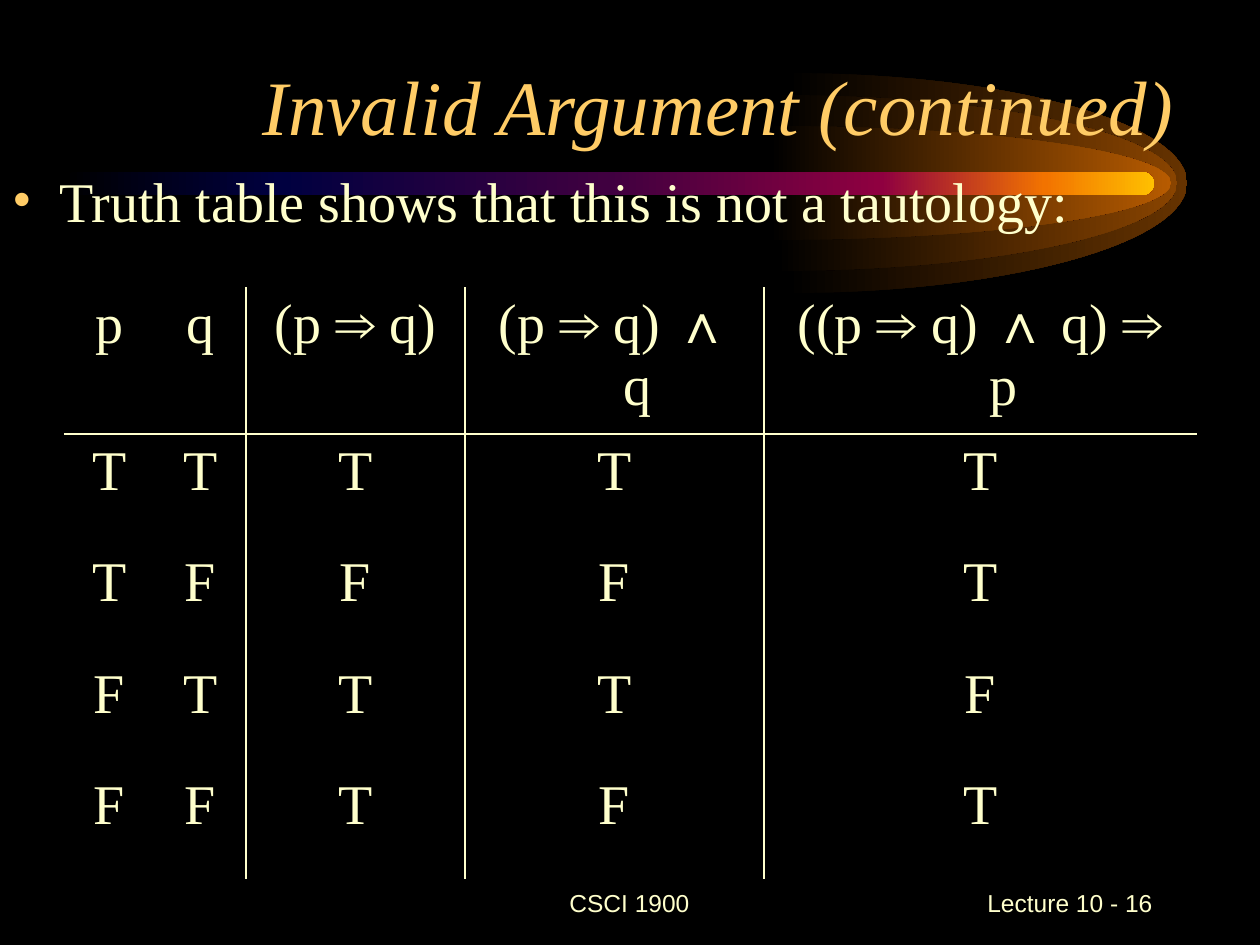
from lxml import etree
from pptx import Presentation
from pptx.dml.color import RGBColor
from pptx.enum.shapes import MSO_SHAPE
from pptx.enum.text import MSO_ANCHOR, PP_ALIGN
from pptx.oxml.ns import qn
from pptx.util import Pt

ROUND = MSO_SHAPE.ROUNDED_RECTANGLE
MIDDLE, BOTTOM = MSO_ANCHOR.MIDDLE, MSO_ANCHOR.BOTTOM
LEFT, CENTER, RIGHT = PP_ALIGN.LEFT, PP_ALIGN.CENTER, PP_ALIGN.RIGHT
BLACK = RGBColor(0x00, 0x00, 0x00)
GOLD = RGBColor(0xFF, 0xCC, 0x66)
CREAM = RGBColor(0xFF, 0xFF, 0xCC)
BROWN = RGBColor(0x66, 0x33, 0x00)
RUST = RGBColor(0x89, 0x44, 0x00)
AMBER = RGBColor(0xB7, 0x5B, 0x00)
NAVY = RGBColor(0x00, 0x00, 0x40)
PLUM = RGBColor(0x40, 0x00, 0x40)
WINE = RGBColor(0x8F, 0x00, 0x40)
ORANGE = RGBColor(0xF2, 0x73, 0x00)
YELLOW = RGBColor(0xFF, 0xBF, 0x00)
SERIF, SANS = "Times New Roman", "Arial"
NO_STYLE = "{2D5ABB26-0587-4C30-8999-92F81FD0307C}"
PX = 914400 / 126


def blend(shape, stops):
    shape.shadow.inherit = False
    shape.line.fill.background()
    shape.fill.gradient()
    shape.fill.gradient_angle = 0
    stop_list = shape.fill._fill._gradFill.find(qn("a:gsLst"))
    for old in list(stop_list):
        stop_list.remove(old)
    for pos, color in stops:
        stop = etree.SubElement(stop_list, qn("a:gs"), pos=str(pos * 1000))
        etree.SubElement(stop, qn("a:srgbClr"), val=str(color))


def write(frame, text, size, font, color, align):
    frame.text = text
    par = frame.paragraphs[0]
    par.alignment = align
    style = par.runs[0].font
    style.size, style.name = Pt(size), font
    style.color.rgb = color
    return par


prs = Presentation()
prs.slide_width, prs.slide_height = round(1260 * PX), round(945 * PX)
slide = prs.slides.add_slide(prs.slide_layouts[5])
slide.background.fill.solid()
slide.background.fill.fore_color.rgb = BLACK
shapes = slide.shapes

for left, half, color in [(786, 110, BROWN), (776, 88, RUST), (770, 57, AMBER)]:
    pen = shapes.build_freeform(left, 183 - half, scale=PX)
    pen.add_line_segments([(left + 401, 183), (left, 183 + half)], close=True)
    arc = pen.convert_to_shape()
    curves = [
        [(221, 0), (401, round(half * 0.45)), (401, half)],
        [(401, round(half * 1.55)), (221, 2 * half), (0, 2 * half)],
    ]
    for line, curve in zip(list(arc._element.iter(qn("a:lnTo"))), curves):
        bend = etree.Element(qn("a:cubicBezTo"))
        for x, y in curve:
            etree.SubElement(bend, qn("a:pt"), x=str(x), y=str(y))
        line.getparent().replace(line, bend)
    blend(arc, [(0, BLACK), (100, color)])

bar = shapes.add_shape(ROUND, *[round(n * PX) for n in (63, 172, 1091, 23)])
bar.adjustments[0] = 0.5
blend(bar, [(0, BLACK), (20, NAVY), (50, PLUM), (75, WINE), (90, ORANGE), (100, YELLOW)])

for text, box, align in [
    ("CSCI 1900", (430, 871, 399, 63), CENTER),
    (" Lecture 10 - 16", (903, 871, 262, 63), RIGHT),
]:
    frame = shapes.add_textbox(*[round(n * PX) for n in box]).text_frame
    frame.word_wrap = True
    frame.vertical_anchor = MIDDLE
    write(frame, text, 14, SANS, CREAM, align)

title = shapes.title
shapes._spTree.append(title._element)
title.left, title.top, title.width, title.height = [
    round(n * PX) for n in (53, 0, 1134, 157)
]
title.text_frame.vertical_anchor = BOTTOM
par = write(title.text_frame, "Invalid Argument (continued)", 44, SERIF, GOLD, RIGHT)
par.runs[0].font.italic = True

body = shapes.add_textbox(*[round(n * PX) for n in (0, 160, 1260, 169)]).text_frame
body.word_wrap = True
par = write(body, "Truth table shows that this is not a tautology:", 32, SERIF, CREAM, LEFT)
par.space_before = Pt(6)
props = par._p.get_or_add_pPr()
indent = round(47 * PX)
props.set("marL", str(indent))
props.set("indent", str(-indent))
mark = etree.SubElement(props, qn("a:buClr"))
etree.SubElement(mark, qn("a:srgbClr"), val=str(GOLD))
etree.SubElement(props, qn("a:buFont"), typeface=SERIF)
etree.SubElement(props, qn("a:buChar"), char="•")

rows = [
    ["p", "q", "(p ⇒ q)", "(p ⇒ q) ∧ q", "((p ⇒ q) ∧ q) ⇒ p"],
    "TTTTT",
    "TFFFT",
    "FTTTF",
    "FFTFT",
]
widths = [91, 91, 219, 299, 433]
heights = [147, 111, 112, 111, 111]
table = shapes.add_table(
    5, 5, *[round(n * PX) for n in (64, 287, sum(widths), sum(heights))]
).table
table._tbl.tblPr.find(qn("a:tableStyleId")).text = NO_STYLE
table.first_row = table.horz_banding = False
for col, width in zip(table.columns, widths):
    col.width = round(width * PX)
for row, height in zip(table.rows, heights):
    row.height = round(height * PX)

for r, row in enumerate(rows):
    for c, text in enumerate(row):
        cell = table.cell(r, c)
        par = write(cell.text_frame, text, 32, SERIF, CREAM, CENTER)
        props = par._p.get_or_add_pPr()
        props.set("marL", str(indent))
        props.set("indent", str(-indent))
        edges = {"L": c > 1, "R": 0 < c < 4, "T": r == 1, "B": r == 0}
        for side, shown in edges.items():
            line = etree.SubElement(
                cell._tc.get_or_add_tcPr(), qn(f"a:ln{side}"), w="12700"
            )
            if shown:
                ink = etree.SubElement(line, qn("a:solidFill"))
                etree.SubElement(ink, qn("a:srgbClr"), val=str(CREAM))
            else:
                etree.SubElement(line, qn("a:noFill"))
        cell.fill.background()

prs.save("out.pptx")
